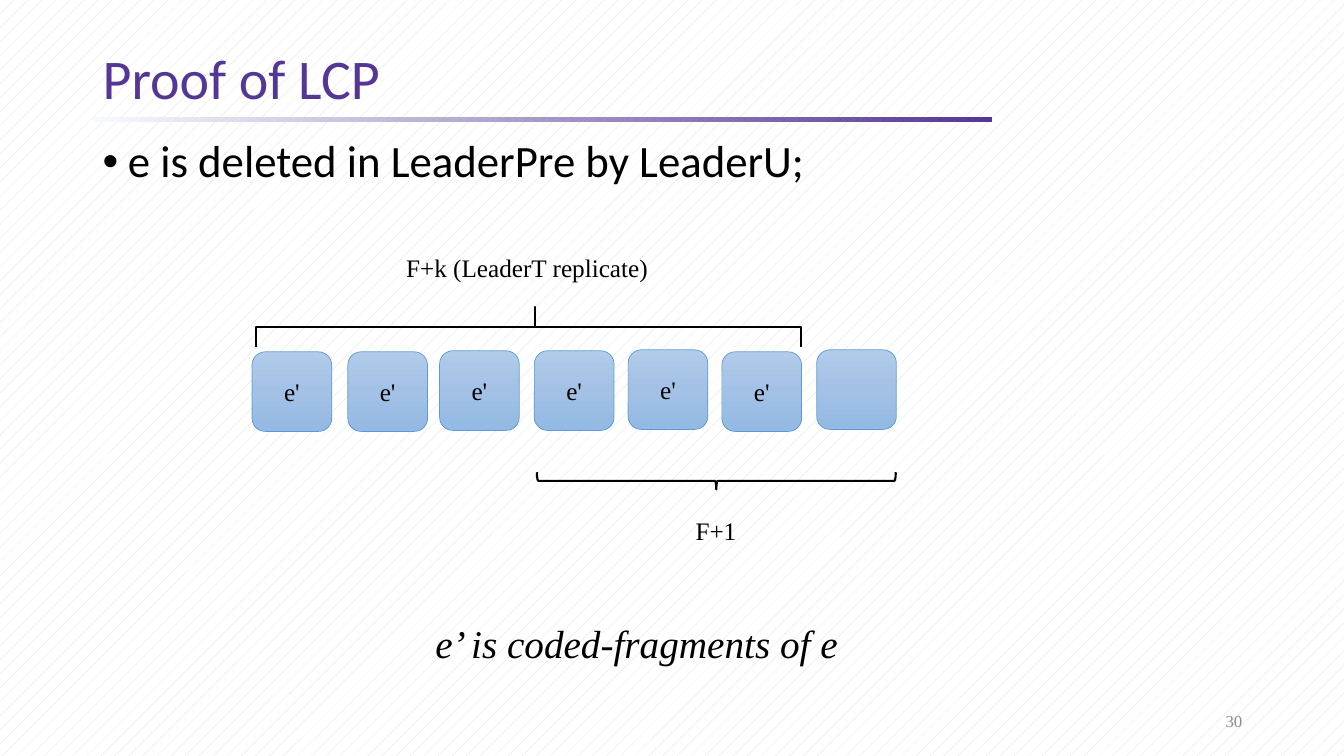
from copy import deepcopy
from dataclasses import dataclass

from lxml import etree
from pptx import Presentation
from pptx.dml.color import RGBColor
from pptx.enum.dml import MSO_PATTERN
from pptx.enum.shapes import MSO_SHAPE
from pptx.enum.text import MSO_ANCHOR, MSO_AUTO_SIZE, PP_ALIGN
from pptx.oxml.ns import qn
from pptx.util import Inches, Pt


@dataclass(frozen=True)
class Theme:
    heading_font: str = "Calibri"
    label_font: str = "Times New Roman"
    black: str = "000000"
    purple: str = "543795"
    rule_start: str = "F7FAFD"
    gray: str = "8C8C8C"
    white: str = "FFFFFF"
    hatch: str = "D9D9D9"
    box_line: str = "5B9BD5"
    box_fill: tuple = ("B1CBE9", "A3C1E5", "93B9E4")
    title_size: int = 40
    body_size: int = 32
    note_size: int = 28
    label_size: int = 18
    number_size: int = 12


THEME = Theme()
BOX_SIZE = 0.79
BOX_POSITIONS = [(2.5, 3.49), (3.45, 3.49), (4.36, 3.48), (5.3, 3.48),
                 (6.23, 3.47), (7.16, 3.49), (8.1, 3.47)]


def color(value):
    return RGBColor.from_string(value)


def set_values(target, values):
    for name, value in values.items():
        setattr(target, name, value)


def write_text(paragraph, text, size, font=THEME.label_font,
               text_color=THEME.black, italic=False):
    run = paragraph.add_run()
    run.text = text
    set_values(run.font, {"name": font, "size": Pt(size), "italic": italic})
    run.font.color.rgb = color(text_color)


def add_text(slide, area, text, size, frame_format=None,
             paragraph_format=None, bullet=False, **style):
    box = slide.shapes.add_textbox(*map(Inches, area))
    frame = box.text_frame
    set_values(frame, {"word_wrap": True, **(frame_format or {})})
    paragraph = frame.paragraphs[0]
    set_values(paragraph, paragraph_format or {})
    if bullet:
        properties = paragraph._p.get_or_add_pPr()
        properties.set("marL", str(Inches(0.25)))
        properties.set("indent", str(Inches(-0.25)))
        etree.SubElement(properties, qn("a:buFont"), typeface="Arial")
        etree.SubElement(properties, qn("a:buChar"), char="•")
    write_text(paragraph, text, size, **style)


def add_label(slide, area, text, size, **style):
    fit = {"word_wrap": False, "auto_size": MSO_AUTO_SIZE.SHAPE_TO_FIT_TEXT}
    add_text(slide, area, text, size, fit, **style)


def add_plain_shape(slide, kind, area):
    shape = slide.shapes.add_shape(kind, *map(Inches, area))
    shape.shadow.inherit = False
    return shape


def fill_gradient(shape, colors, angle):
    shape.fill.gradient()
    shape.fill.gradient_angle = angle
    stop_list = shape._element.spPr.find(qn("a:gradFill")).find(qn("a:gsLst"))
    for _ in colors[2:]:
        stop_list.append(deepcopy(stop_list[-1]))
    for index, (stop, value) in enumerate(zip(shape.fill.gradient_stops, colors)):
        stop.position = index / (len(colors) - 1)
        stop.color.rgb = color(value)


def set_line(shape, line_color, width):
    shape.line.color.rgb = color(line_color)
    shape.line.width = Pt(width)


def add_title_rule(slide):
    rule = add_plain_shape(slide, MSO_SHAPE.RECTANGLE, (0.92, 1.16, 8.92, 0.05))
    fill_gradient(rule, (THEME.rule_start, THEME.purple), 0)
    rule.line.fill.background()


def add_fragment(slide, left, top, text):
    box = add_plain_shape(slide, MSO_SHAPE.ROUNDED_RECTANGLE,
                          (left, top, BOX_SIZE, BOX_SIZE))
    fill_gradient(box, THEME.box_fill, 270)
    set_line(box, THEME.box_line, 0.5)
    if text:
        box.text_frame.vertical_anchor = MSO_ANCHOR.MIDDLE
        paragraph = box.text_frame.paragraphs[0]
        paragraph.alignment = PP_ALIGN.CENTER
        write_text(paragraph, text, THEME.label_size)


def add_brace(slide, area, rotation, adjustments=()):
    brace = add_plain_shape(slide, MSO_SHAPE.LEFT_BRACE, area)
    brace.rotation = rotation
    brace.fill.background()
    set_line(brace, THEME.black, 1.5)
    for index, value in enumerate(adjustments):
        brace.adjustments[index] = value


def set_background(slide):
    fill = slide.background.fill
    fill.patterned()
    fill.pattern = MSO_PATTERN.PERCENT_5
    fill.fore_color.rgb = color(THEME.hatch)
    fill.back_color.rgb = color(THEME.white)


def main():
    presentation = Presentation()
    set_values(presentation, {"slide_width": Inches(13.33),
                              "slide_height": Inches(7.5)})
    slide = presentation.slides.add_slide(presentation.slide_layouts[6])
    set_background(slide)
    add_title_rule(slide)

    middle = {"vertical_anchor": MSO_ANCHOR.MIDDLE}
    add_text(slide, (9.42, 6.95, 3, 0.4), "30", THEME.number_size, middle,
             {"alignment": PP_ALIGN.RIGHT}, text_color=THEME.gray)
    add_text(slide, (0.92, 0.43, 11.5, 0.75), "Proof of LCP", THEME.title_size,
             middle, {"line_spacing": 0.9}, font=THEME.heading_font,
             text_color=THEME.purple)
    add_text(slide, (0.92, 1.33, 11.5, 5.43),
             "e is deleted in LeaderPre by LeaderU;", THEME.body_size,
             paragraph_format={"line_spacing": 0.9}, bullet=True,
             font=THEME.heading_font)

    for left, top in BOX_POSITIONS[:-1]:
        add_fragment(slide, left, top, "e'")
    add_fragment(slide, *BOX_POSITIONS[-1], "")

    add_brace(slide, (5.04, 0.54, 0.4, 5.41), 90, (0, 0.488))
    add_brace(slide, (7.02, 2.99, 0.17, 3.56), 270)
    add_label(slide, (3.93, 2.45, 2.63, 0.4), "F+k (LeaderT replicate)",
              THEME.label_size)
    add_label(slide, (6.8, 5.06, 0.61, 0.4), "F+1", THEME.label_size)
    add_label(slide, (4.22, 6.09, 4.23, 0.57), "e’ is coded-fragments of e",
              THEME.note_size, italic=True)
    presentation.save("out.pptx")


if __name__ == "__main__":
    main()
